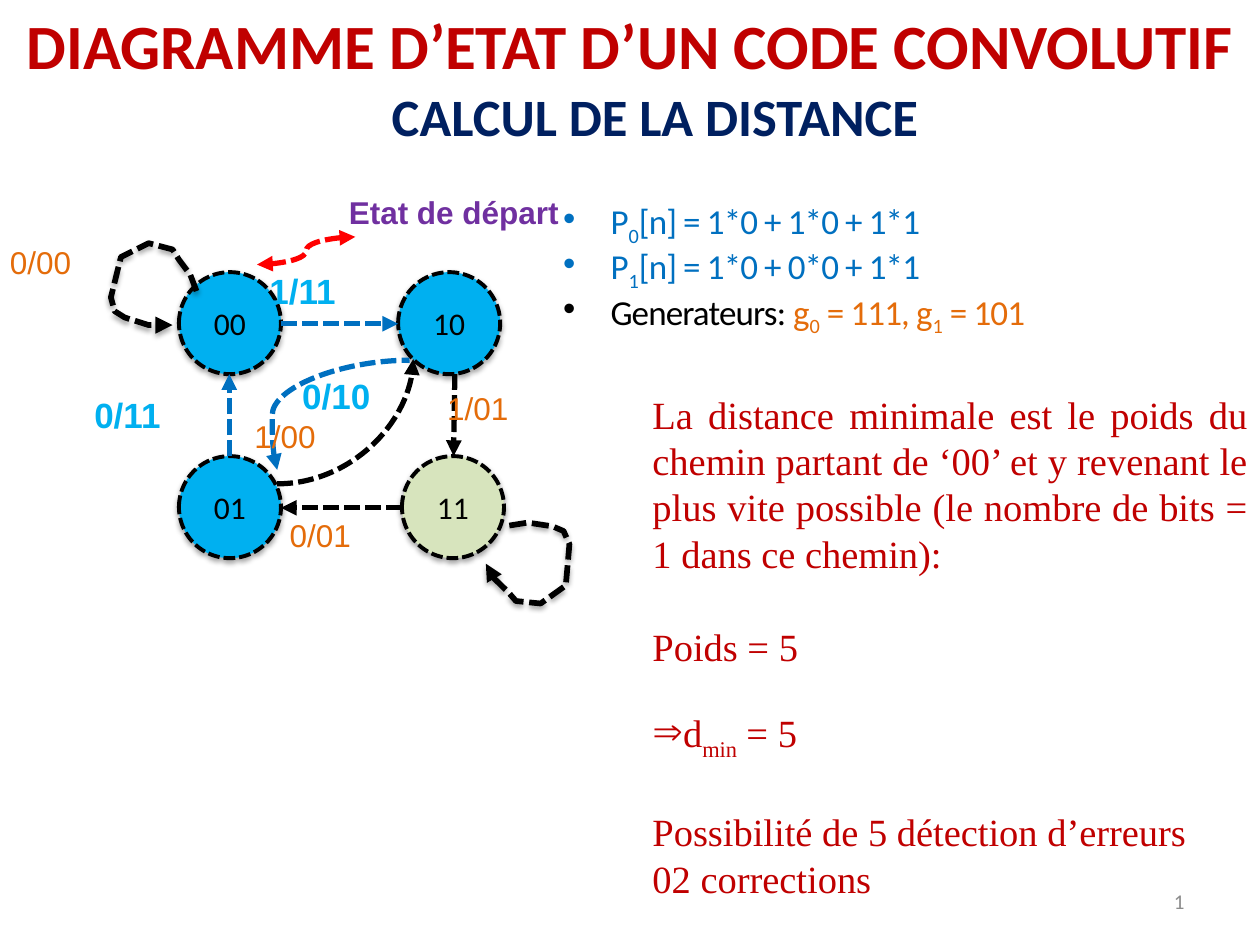
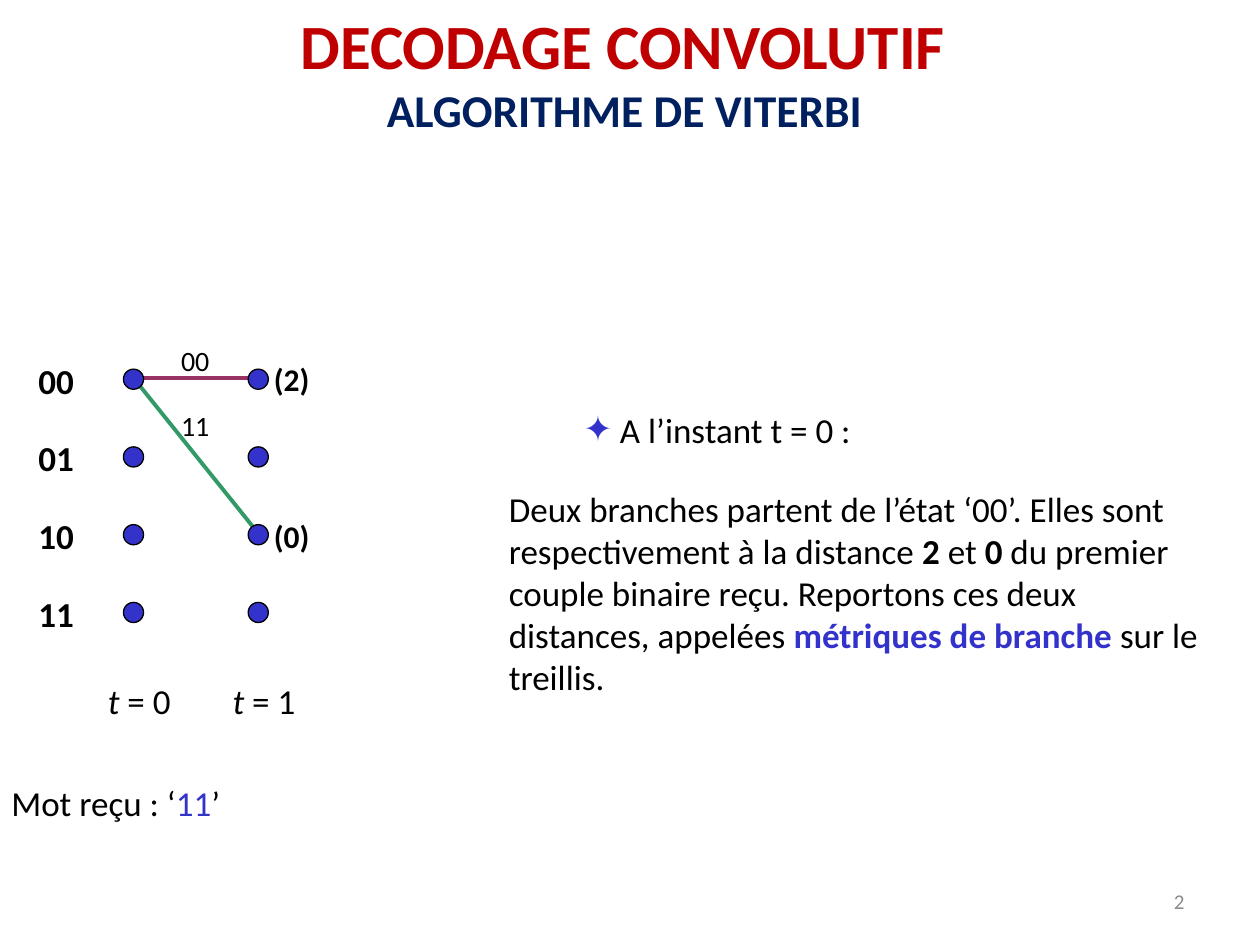
"""Builds two slides on convolutional codes: a state diagram and a Viterbi trellis."""
import dataclasses
import typing

import lxml.etree
import pptx
import pptx.dml.color
import pptx.enum.dml
import pptx.enum.shapes
import pptx.enum.text
import pptx.oxml.ns
import pptx.util

WIDE, HIGH = pptx.util.Inches(10), pptx.util.Inches(7.5)
COLS = 100
RED, NAVY, BLACK, GREY = "C00000", "002060", "000000", "8C8C8C"
BLUE, SKY, ORANGE, PURPLE = "0070C0", "00B0F0", "E46C0A", "7030A0"
INDIGO, PLUM, GREEN, SAGE = "3333CC", "993366", "339966", "D7E4BD"
LINK = pptx.enum.shapes.MSO_CONNECTOR
ALIGN = pptx.enum.text.PP_ALIGN
ANCHOR = pptx.enum.text.MSO_ANCHOR
qn = pptx.oxml.ns.qn


@dataclasses.dataclass(frozen=True)
class Style:
    size: float
    hue: str = BLACK
    font: str = "Calibri"
    bold: bool = False
    slant: bool = False
    base: int = 0
    track: int = 0

    def but(self, **change: typing.Any) -> "Style":
        return dataclasses.replace(self, **change)


class Bit(typing.NamedTuple):
    text: str
    style: Style


class Box(typing.NamedTuple):
    left: float
    top: float
    wide: float
    high: float


class Node(typing.NamedTuple):
    name: str
    left: float
    top: float
    fill: str


class Tag(typing.NamedTuple):
    text: str
    left: float
    top: float
    style: Style


class Edge(typing.NamedTuple):
    start: tuple
    end: tuple
    hue: str
    kind: int = LINK.STRAIGHT
    head: bool = False
    tail: bool = True
    form: str = ""
    bend: typing.Optional[int] = None


HEAD = Style(36, RED, bold=True)
TEXT = Style(20)
CODE = Style(18, ORANGE, "Arial")
PATH = Style(20, SKY, "Arial", True)
MATH = Style(20, BLUE, track=-50)
NOTE = Style(22, RED, "Times New Roman")
MARK = TEXT.but(bold=True)

NODES = [Node("00", 14.2, 21.6, SKY), Node("10", 31.6, 21.6, SKY),
         Node("01", 14.2, 36.2, SKY), Node("11", 31.9, 36.2, SAGE)]
TAGS = [Tag("0/00", -.2, 18.8, CODE), Tag("1/11", 20.4, 20.9, PATH),
        Tag("1/01", 34.5, 30.4, CODE), Tag("0/01", 22, 40.5, CODE),
        Tag("0/11", 6.5, 30.7, PATH), Tag("1/00", 19.2, 32.6, CODE),
        Tag("0/10", 23, 29.2, PATH)]
EDGES = [Edge((22.3, 25.7), (31.6, 25.7), BLUE),
         Edge((36.1, 29.7), (36, 36.2), BLACK),
         Edge((31.9, 40.3), (22.3, 40.3), BLACK),
         Edge((18.2, 36.2), (18.2, 29.7), BLUE),
         Edge((22, 38.4), (32.8, 28.5), BLACK, LINK.CURVE, form="curvedConnector2"),
         Edge((22, 37.3), (32.5, 28.6), BLUE, LINK.CURVE, True, False, bend=-3800),
         Edge((28.2, 18.8), (20.4, 21), "FF0000", LINK.CURVE, True)]
LOOP = [(15.6, 23.1), (15.1, 21.8), (14.2, 20.6), (13.7, 19.8), (11.8, 19.3),
        (9.6, 20.4), (9.4, 21.2), (8.8, 23.6), (9.1, 24.7), (9.9, 25.2),
        (11.8, 25.8), (13.7, 25.8)]


def cell(count: float) -> int:
    """Turn grid columns into a length."""
    return round(WIDE * count / COLS)


def tint(code: str) -> pptx.dml.color.RGBColor:
    return pptx.dml.color.RGBColor.from_string(code)


def add(host, tag: str, **attrs: str):
    return lxml.etree.SubElement(host, qn(tag), attrs)


def put(shape, box: Box) -> None:
    shape.left, shape.top, shape.width, shape.height = map(cell, box)


def dress(run, style: Style) -> None:
    font = run.font
    font.size, font.name = pptx.util.Pt(style.size), style.font
    font.bold, font.italic = style.bold, style.slant
    font.color.rgb = tint(style.hue)
    if style.base:
        run._r.get_or_add_rPr().set("baseline", str(style.base * 1000))
    if style.track:
        run._r.get_or_add_rPr().set("spc", str(style.track))


def write(frame, lines: list, align=ALIGN.LEFT, pad: tuple = (1, .5)) -> None:
    """Fill a frame with one paragraph per list of bits."""
    frame.word_wrap = True
    frame.auto_size = pptx.enum.text.MSO_AUTO_SIZE.NONE
    frame.vertical_anchor = ANCHOR.TOP
    frame.margin_left = frame.margin_right = cell(pad[0])
    frame.margin_top = frame.margin_bottom = cell(pad[1])
    frame.text = "\n".join(bits[0].text for bits in lines)
    for par, bits in zip(frame.paragraphs, lines):
        par.alignment = align
        for bit in bits[1:]:
            par.add_run().text = bit.text
        for run, bit in zip(par.runs, bits):
            dress(run, bit.style)


def label(slide, box: Box, lines: list, **look: typing.Any):
    shape = slide.shapes.add_textbox(*map(cell, box))
    write(shape.text_frame, lines, **look)
    return shape.text_frame


def bullet(par, mark: str, indent: float, hue: str = "") -> None:
    props = par._p.get_or_add_pPr()
    props.set("marL", str(cell(indent)))
    props.set("indent", str(-cell(indent)))
    if hue:
        add(add(props, "a:buClr"), "a:srgbClr", val=hue)
    add(props, "a:buChar", char=mark)


def stroke(shape, hue: str, width: float, dash: bool = False,
           head: bool = False, tail: bool = False, soft: bool = False) -> None:
    """Set line, arrowheads and shadow."""
    shape.line.color.rgb = tint(hue)
    shape.line.width = pptx.util.Pt(width)
    if dash:
        shape.line.dash_style = pptx.enum.dml.MSO_LINE.SQUARE_DOT
    props = shape._element.spPr
    for tag, used in (("a:headEnd", head), ("a:tailEnd", tail)):
        if used:
            add(props.find(qn("a:ln")), tag, type="triangle")
    glow = add(props, "a:effectLst")
    if soft:
        cast = add(glow, "a:outerShdw", blurRad=str(pptx.util.Pt(3.1)),
                   dist=str(pptx.util.Pt(1.8)), dir="5400000", rotWithShape="0")
        add(add(cast, "a:srgbClr", val=BLACK), "a:alpha", val="35000")


def disc(slide, left: float, top: float, size: float, fill: str):
    shape = slide.shapes.add_shape(pptx.enum.shapes.MSO_SHAPE.OVAL,
                                   *map(cell, (left, top, size, size)))
    shape.fill.solid()
    shape.fill.fore_color.rgb = tint(fill)
    return shape


def state(slide, node: Node) -> None:
    shape = disc(slide, node.left, node.top, 8.1, node.fill)
    stroke(shape, BLACK, 2.25, dash=True, soft=True)
    write(shape.text_frame, [[Bit(node.name, Style(18))]], ALIGN.CENTER)
    shape.text_frame.vertical_anchor = ANCHOR.MIDDLE


def join(slide, edge: Edge) -> None:
    line = slide.shapes.add_connector(edge.kind, *map(cell, edge.start + edge.end))
    geom = line._element.spPr.find(qn("a:prstGeom"))
    if edge.form:
        geom.set("prst", edge.form)
    if edge.bend is not None:
        add(geom.find(qn("a:avLst")), "a:gd", name="adj1", fmla=f"val {edge.bend}")
    stroke(line, edge.hue, 3, True, edge.head, edge.tail)


def loop(slide, right: float = 0, down: float = 0, turn: float = 0) -> None:
    """Draw a self-transition, turned about its middle."""
    spots = [(cell(x + right), cell(y + down)) for x, y in LOOP]
    pen = slide.shapes.build_freeform(*spots[0])
    pen.add_line_segments(spots[1:], close=False)
    shape = pen.convert_to_shape()
    shape.fill.background()
    shape.rotation = turn
    stroke(shape, BLACK, 3.25, True, bool(turn), not turn, True)


def start(deck, title: list, high: float, body: Box, lines: list, page: int,
          pad: tuple = (1, .5)):
    """Add a slide with title, body and page number."""
    slide = deck.slides.add_slide(deck.slide_layouts[1])
    head, main = slide.placeholders
    put(head, Box(0, 0, COLS, high))
    write(head.text_frame, title, ALIGN.CENTER)
    put(main, body)
    write(main.text_frame, lines, pad=pad)
    foot = label(slide, Box(71.7, 69.5, 23.3, 4), [[Bit(str(page), Style(12, GREY))]],
                 align=ALIGN.RIGHT)
    foot.vertical_anchor = ANCHOR.MIDDLE
    run = foot.paragraphs[0].runs[0]._r
    run.tag = qn("a:fld")
    run.set("id", "{B6F15528-21DE-4FAA-801E-634DDDAF4B2B}")
    run.set("type", "slidenum")
    return slide, main.text_frame


def diagram(deck) -> None:
    low, warm = MATH.but(base=-25), MATH.but(hue=ORANGE)
    sub = warm.but(base=-25)
    rules = [[Bit("P", MATH), Bit(str(i), low), Bit(f"[n] = 1*0 + {k}*0 + 1*1", MATH)]
             for i, k in enumerate((1, 0))]
    rules.append([Bit("Generateurs: ", MATH.but(hue=BLACK)), Bit("g", warm), Bit("0", sub),
                  Bit(" = 111, g", warm), Bit("1", sub), Bit(" = 101", warm)])
    slide, frame = start(deck, [[Bit("DIAGRAMME D’ETAT D’UN CODE CONVOLUTIF", HEAD)]], 7.1,
                         Box(44.3, 15.8, 54, 59.2), rules, 52, (.4, .4))
    for par in frame.paragraphs:
        par.line_spacing = .8
        bullet(par, "•", 3.75)
    for node in NODES:
        state(slide, node)
    loop(slide)
    loop(slide, 29.8, 22.2, 171)
    for edge in EDGES:
        join(slide, edge)
    for tag in TAGS:
        label(slide, Box(tag.left, tag.top, 12.4, 4.4), [[Bit(tag.text, tag.style)]])
    label(slide, Box(26.7, 14.8, 20, 4),
          [[Bit("Etat de départ", CODE.but(hue=PURPLE, bold=True))]])
    frame = label(slide, Box(50.8, 30.5, 49.2, 44.8), [
        [Bit("La distance minimale est le poids du chemin partant de ‘00’ et y revenant le "
             "plus vite possible (le nombre de bits = 1 dans ce chemin):", NOTE)],
        [Bit("Poids = 5", NOTE)],
        [Bit("d", NOTE), Bit("min", NOTE.but(base=-25)), Bit(" = 5", NOTE)],
        [Bit("Possibilité de 5 détection d’erreurs", NOTE)],
        [Bit("02 corrections", NOTE)]], align=ALIGN.JUSTIFY)
    for par in frame.paragraphs:
        par.line_spacing = pptx.util.Pt(26.5)
    for par in frame.paragraphs[1:4]:
        par.space_before = pptx.util.Pt(26.5)
    bullet(frame.paragraphs[2], "⇒", 0)
    label(slide, Box(22.7, 6.2, 58.6, 6.1),
          [[Bit("CALCUL DE LA DISTANCE", HEAD.but(size=30, hue=NAVY))]], align=ALIGN.CENTER)


def trellis(deck) -> None:
    slide, frame = start(deck, [[Bit("DECODAGE CONVOLUTIF ", HEAD)],
                                [Bit("ALGORITHME DE VITERBI ", HEAD.but(size=26, hue=NAVY))]],
                         11.4, Box(45.3, 31.9, 26.4, 4.3),
                         [[Bit("A l’instant t = 0 :", TEXT)]], 97)
    bullet(frame.paragraphs[0], "✦", 2.9, INDIGO)
    left, top, step, row = 10.6, 30.1, 9.9, 6.17
    tight = {"align": ALIGN.CENTER, "pad": (0, 0)}
    for code, hue, drop, high in (("00", PLUM, 0, 27.3), ("11", GREEN, 2, 32.4)):
        line = slide.shapes.add_connector(
            LINK.STRAIGHT, *map(cell, (left, 30, left + step, 30 + drop * row)))
        stroke(line, hue, 2.25)
        label(slide, Box(14.1, high, 2.8, 2.7), [[Bit(code, Style(16))]], **tight)
    for i, name in enumerate(("00", "01", "10", "11")):
        mid = top + i * row
        label(slide, Box(2.7, mid - 1.6, 3.5, 3.3), [[Bit(name, MARK)]], **tight)
        for k in range(2):
            stroke(disc(slide, left + k * step - .8, mid - .8, 1.6, INDIGO), BLACK, .75)
    for k in range(2):
        label(slide, Box(7.3 + k * step, 53.9, 7.5, 3.3),
              [[Bit("t", TEXT.but(slant=True)), Bit(f" = {k}", TEXT)]], **tight)
    for cost, high in (("(2)", 28.6), ("(0)", 41)):
        label(slide, Box(21.6, high, 3.1, 3), [[Bit(cost, MARK.but(size=18))]], **tight)
    label(slide, Box(.9, 61.5, 17.3, 4.3),
          [[Bit("Mot reçu : ‘", TEXT), Bit("11", TEXT.but(hue=INDIGO)), Bit("’", TEXT)]],
          pad=(0, .5))
    label(slide, Box(39.4, 38.2, 58.3, 14.3), [[
        Bit("Deux branches partent de l’état ‘00’. Elles sont respectivement à la distance ", TEXT),
        Bit("2", MARK), Bit(" et ", TEXT), Bit("0", MARK),
        Bit(" du premier couple binaire reçu. Reportons ces deux distances, appelées ", TEXT),
        Bit("métriques de branche ", MARK.but(hue=INDIGO)), Bit("sur le treillis.", TEXT)]])


def main() -> None:
    deck = pptx.Presentation()
    deck.slide_width, deck.slide_height = WIDE, HIGH
    diagram(deck)
    trellis(deck)
    deck.save("out.pptx")


if __name__ == "__main__":
    main()
